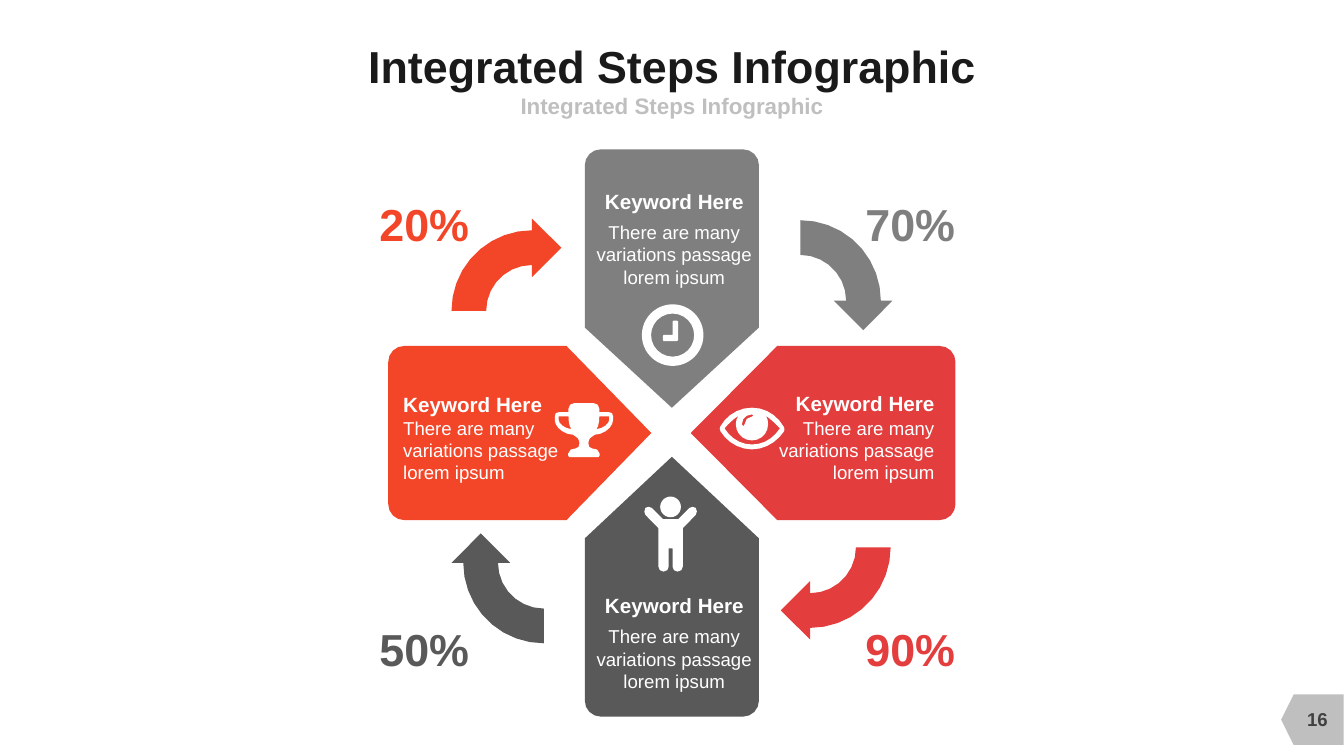
from dataclasses import dataclass
from math import cos, dist, pi, sin

from pptx import Presentation
from pptx import util as u
from pptx.dml.color import RGBColor
from pptx.enum import shapes, text


@dataclass(frozen=True)
class Theme:
    font: str = "Arial"
    white: str = "FFFFFF"
    ink: str = "1A1A1A"
    page: str = "404040"
    pale: str = "BFBFBF"
    gray: str = "7F7F7F"
    red: str = "E33D3D"
    dark: str = "595959"
    flame: str = "F34629"
    large: float = 32
    sub: float = 16
    head: float = 14.7
    body: float = 13.3


THEME = Theme()
HUB = (479.9, 309.3)
LEFT, MID, RIGHT = text.PP_ALIGN.LEFT, text.PP_ALIGN.CENTER, text.PP_ALIGN.RIGHT
TOP, MIDDLE, BASE = text.MSO_ANCHOR.TOP, text.MSO_ANCHOR.MIDDLE, text.MSO_ANCHOR.BOTTOM


def apply(target, values):
    for name, value in values.items():
        setattr(target, name, value)


def trace(*steps):
    points = [steps[0]]
    for step in steps[1:]:
        if len(step) == 2:
            points.append(step)
            continue
        nodes = [points[-1], step[:2], step[2:4], step[4:]]
        count = max(2, min(5, round(dist(nodes[0], nodes[3]) / 3)))
        for n in range(1, count + 1):
            t = n / count
            parts = ((1 - t) ** 3, 3 * t * (1 - t) ** 2, 3 * t * t * (1 - t), t ** 3)
            points.append(tuple(sum(p * node[i] for p, node in zip(parts, nodes))
                                for i in (0, 1)))
    return points


def arc(radius, start, end, count, center=(0, 0)):
    angles = [(start + (end - start) * n / count) * pi / 180 for n in range(count + 1)]
    return [(center[0] + radius * cos(a), center[1] + radius * sin(a)) for a in angles]


def flip(points):
    return [(-x, y) for x, y in reversed(points)]


def turn(points, quarters):
    for _ in range(quarters):
        points = [(-y, x) for x, y in points]
    return points


def paint(shape, color):
    shape.shadow.inherit = False
    shape.fill.solid()
    shape.fill.fore_color.rgb = RGBColor.from_string(color)
    shape.line.fill.background()


def draw(slide, center, color, *loops):
    placed = [[((center[0] + x) * 100, (center[1] + y) * 100) for x, y in loop]
              for loop in loops]
    pen = slide.shapes.build_freeform(*placed[0][0], scale=u.Pt(1) / 100)
    for n, loop in enumerate(placed):
        if n:
            pen.move_to(*loop[0])
        pen.add_line_segments(loop[1:], close=True)
    paint(pen.convert_to_shape(), color)


def preset(slide, kind, box, color):
    shape = slide.shapes.add_shape(kind, *map(u.Pt, box))
    paint(shape, color)
    return shape


def write(parent, words, box, size, color, bold=True, align=MID, anchor=MIDDLE, wrap=False):
    frame = parent.shapes.add_textbox(*map(u.Pt, box)).text_frame
    apply(frame, dict(margin_left=0, margin_right=0, margin_top=0, margin_bottom=0,
                      word_wrap=wrap, vertical_anchor=anchor))
    line = frame.paragraphs[0]
    line.alignment = align
    run = line.add_run()
    run.text = words
    apply(run.font, dict(name=THEME.font, size=u.Pt(size), bold=bold))
    run.font.color.rgb = RGBColor.from_string(color)


def panel(slide, quarters, color, tip):
    half, neck, end, bend = 62.2, 75.3, 202.6, 11.4
    side = [(0, -tip), (half, -neck)] + arc(bend, 0, -90, 4, (half - bend, bend - end))
    draw(slide, HUB, color, turn(side + flip(side)[:-1], quarters))


def arrow(slide, quarters, color, center):
    bow = arc(57.5, 180, 270, 9) + [(0, -65.8), (21, -45), (0, -24)] + arc(32.7, 270, 180, 7)
    draw(slide, center, color, turn(bow, quarters))


def card(slide, left, top, align, gap):
    group = slide.shapes.add_group_shape()
    shift = {LEFT: 0, MID: 13, RIGHT: 26}[align]
    write(group, "There are many variations passage lorem ipsum",
          (left, top + gap, 125.3, 48.2), THEME.body, THEME.white, False, align, TOP, True)
    write(group, "Keyword Here", (left + shift, top, 99.4, 18), THEME.head, THEME.white,
          align=align, anchor=TOP)


def clock(slide):
    ring = preset(slide, shapes.MSO_SHAPE.DONUT, (458.5, 217.4, 44, 44), THEME.white)
    ring.adjustments[0] = 0.15
    hand = [(-7, .6), (-6.5, -.2), (0, -.2), (0, -9.8), (.6, -10.4), (3, -10.4),
            (4, -9.8), (4, 3.6), (3, 4.2), (-6.5, 4.2), (-7, 3.6)]
    draw(slide, (480.5, 239.4), THEME.white, hand)


def eye(slide):
    rim = trace((23, 2), (18, 9.5, 9.5, 15, 0, 15), (-9.5, 15, -18, 9.5, -22.5, 2),
                (-23.2, .7, -23.2, -.7, -22.5, -1.5), (-18, -9.5, -9.5, -14.8, 0, -14.8),
                (9.5, -14.8, 18, -9.5, 22.8, -1), (23.3, 0, 23.3, 1, 23, 2))
    gap = trace((10, -9), (11.3, -7.2, 11.5, -5, 11.5, -3), (11.5, 3.4, 6.5, 8.6, 0, 8.6),
                (-6.5, 8.6, -11.5, 3.4, -11.5, -3), (-11.5, -5, -11, -7.2, -9.6, -9),
                (-13.5, -6.5, -17, -3.2, -19.6, 0), (-15, 7.2, -8, 11.5, 0, 11.5),
                (8.3, 11.5, 15.2, 7.2, 20, 0), (17.2, -3.2, 13.5, -6.5, 10, -9))
    glint = trace((0, -10), (-4, -10, -7.2, -7, -7.2, -3), (-7.2, -1, -5.2, -1, -5.2, -3),
                  (-5.2, -6, -3, -8.4, 0, -8.4), (1.6, -8.4, 1.6, -10, 0, -10))
    draw(slide, (537.1, 306), THEME.white, rim, gap, glint)


def person(slide):
    half = trace((0, 0), (5.5, 0), (13.5, -8), (14.5, -9, 17, -9, 18, -8),
                 (19, -6.5, 19, -4, 18, -3), (8.7, 6.5), (8.7, 34),
                 (8.7, 36, 7.2, 37.5, 5, 37.5), (2.8, 37.5, 1.4, 36, 1.4, 34),
                 (1.4, 21), (0, 21))
    draw(slide, (479, 370.8), THEME.white, half + flip(half))
    preset(slide, shapes.MSO_SHAPE.OVAL, (471.6, 354.7, 14.8, 14.8), THEME.white)


def trophy(slide):
    half = trace((0, 0), (7, 0), (9.3, 0, 11, 1.6, 11, 4), (11, 6.5), (18, 6.5),
                 (19.8, 6.5, 20.8, 7.2, 20.8, 9.4), (20.8, 12.2),
                 (20.8, 16.6, 15, 22.3, 7.6, 22.6), (4.4, 25),
                 (3.6, 26, 3.2, 27.4, 3.2, 28.8), (3.2, 30.6, 4, 32.4, 6, 32.4),
                 (8.2, 32.4, 11.2, 33.2, 11.2, 36), (11.2, 37.5), (10.5, 38.5), (0, 38.5))
    grip = trace((18, 9.4), (11, 9.4), (11, 13.5, 10.4, 16.5, 9, 18.6),
                 (14, 18, 18, 14.5, 18, 12.2))
    draw(slide, (417.1, 288), THEME.white, half + flip(half), grip, flip(grip))


def badge(slide):
    kind = shapes.MSO_SHAPE.FLOWCHART_OFFPAGE_CONNECTOR
    preset(slide, kind, (919.4, 491.8, 36, 44.6), THEME.pale).rotation = 90
    write(slide, "16", (925, 499, 32, 28.8), THEME.body, THEME.page)


def main():
    deck = Presentation()
    apply(deck, dict(slide_width=u.Pt(960), slide_height=u.Pt(540)))
    slide = deck.slides.add_slide(deck.slide_layouts[6])
    badge(slide)
    name = "Integrated Steps Infographic"
    write(slide, name, (184.3, 28.1, 591.8, 37.4), THEME.large, THEME.ink)
    write(slide, name, (264, 65.2, 432, 20.9), THEME.sub, THEME.pale, wrap=True)

    colors = (THEME.gray, THEME.red, THEME.dark, THEME.flame)
    for quarters, (color, tip) in enumerate(zip(colors, (18, 13.5, 17, 14.7))):
        panel(slide, quarters, color, tip)

    steps = (("20%", THEME.flame, (380, 222), (270.7, 139.7)),
             ("70%", THEME.gray, (571.7, 214.8), (617.8, 139.7)),
             ("90%", THEME.red, (578.7, 391), (617.8, 443.5)),
             ("50%", THEME.dark, (388.4, 402), (270.7, 443.5)))
    for quarters, (share, color, center, spot) in enumerate(steps):
        arrow(slide, quarters, color, center)
        write(slide, share, (*spot, 64.8, 38.9), THEME.large, color, anchor=BASE)

    for icon in (clock, eye, person, trophy):
        icon(slide)
    for spot in ((419, 134.8, MID, 23), (419, 423.7, MID, 23),
                 (542.2, 279.5, RIGHT, 18), (288, 280, LEFT, 17.5)):
        card(slide, *spot)
    deck.save("out.pptx")


if __name__ == "__main__":
    main()
